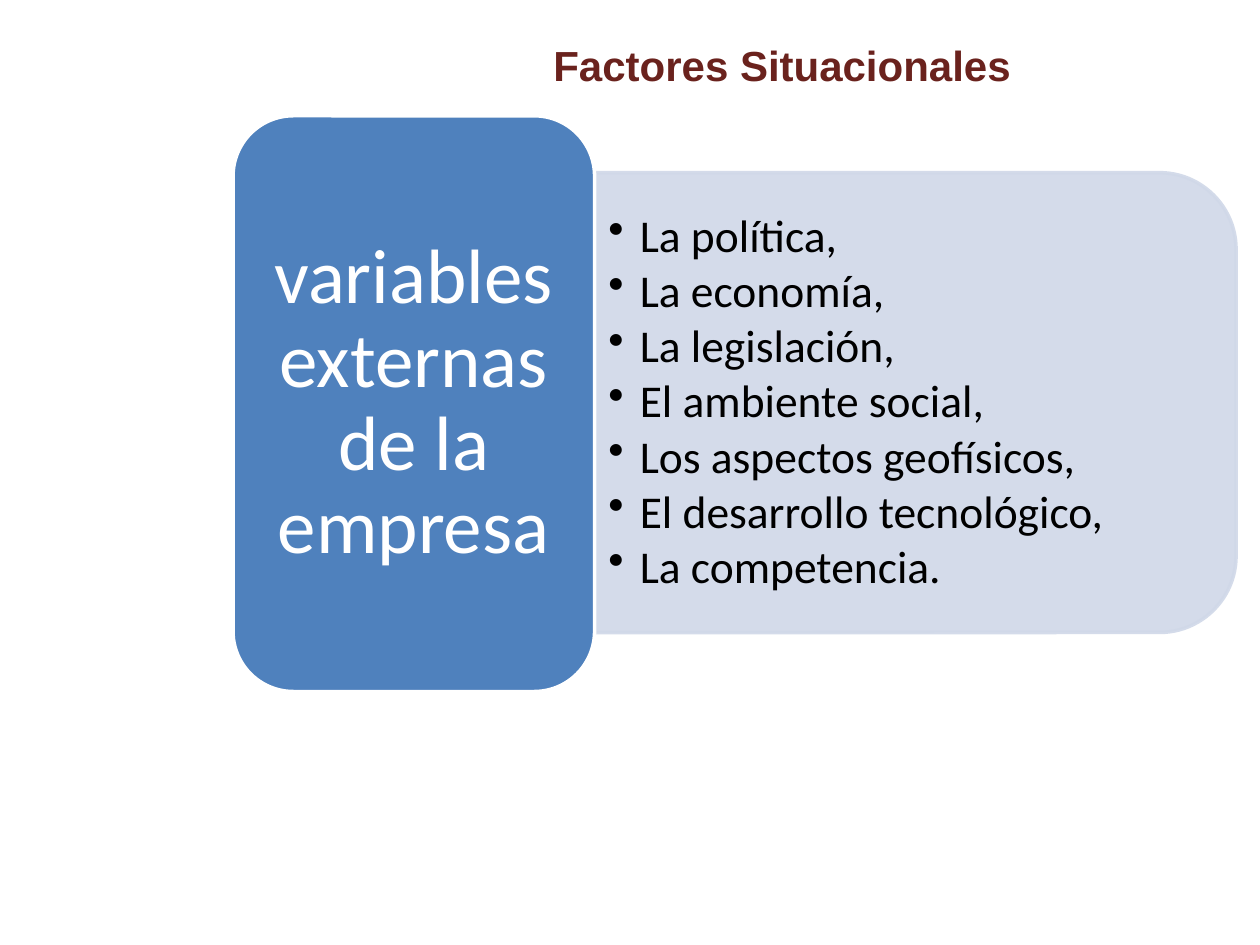
from lxml import etree
from pptx import Presentation
from pptx.dml.color import RGBColor
from pptx.enum import shapes, text
from pptx.oxml.ns import qn
from pptx.util import Pt


def paint(color_format, hex_color):
    color_format.rgb = RGBColor.from_string(hex_color)


def add_run(paragraph, words, font, size, hex_color):
    run = paragraph.add_run()
    run.text = words
    run.font.name = font
    run.font.size = Pt(size)
    paint(run.font.color, hex_color)
    return run


deck = Presentation()
deck.slide_width, deck.slide_height = Pt(720), Pt(540)
slide = deck.slides.add_slide(deck.slide_layouts[5])

# Title
title = slide.shapes.title
title.left, title.top, title.width, title.height = Pt(309), Pt(18.7), Pt(330.5), Pt(36)
title.text_frame.vertical_anchor = text.MSO_ANCHOR.TOP
heading = title.text_frame.paragraphs[0]
heading.alignment = text.PP_ALIGN.LEFT
add_run(heading, "Factores Situacionales", "Arial", 24, "6A221D").font.bold = True

# Pale panel: its rounded top is turned to the right
panel = slide.shapes.add_shape(
    shapes.MSO_SHAPE.ROUND_2_SAME_RECTANGLE, Pt(391.7), Pt(46.8), Pt(262.8), Pt(366.5))
panel.rotation = 90
panel.shadow.inherit = False
panel.fill.solid()
panel.line.width = Pt(2)
for fill in (panel.fill, panel.line.fill):
    fill.solid()
    paint(fill.fore_color, "D0D8E8")
for tint in panel._element.spPr.iter(qn("a:srgbClr")):
    etree.SubElement(tint, qn("a:alpha"), val="90000")

# List of factors, upright over the panel
factors = slide.shapes.add_textbox(Pt(339.8), Pt(111.6), Pt(354.2), Pt(237.6)).text_frame
factors.word_wrap = True
factors.vertical_anchor = text.MSO_ANCHOR.MIDDLE
factors.margin_left = factors.margin_right = Pt(7.8)
names = ["La política,", "La economía,", "La legislación,", "El ambiente social,",
         "Los aspectos geofísicos,", "El desarrollo tecnológico,", "La competencia."]
for i, name in enumerate(names):
    item = factors.add_paragraph() if i else factors.paragraphs[0]
    item.level = 1
    props = item._p.get_or_add_pPr()
    props.set("marL", str(Pt(18)))
    props.set("indent", str(Pt(-18)))
    etree.SubElement(props, qn("a:buChar"), char="•")
    item.line_spacing = 0.9
    item.space_after = Pt(3.5)
    add_run(item, name, "Calibri", 26, "000000")

# Blue card
card = slide.shapes.add_shape(
    shapes.MSO_SHAPE.ROUNDED_RECTANGLE, Pt(133.2), Pt(66.2), Pt(206.6), Pt(329))
card.shadow.inherit = False
card.fill.solid()
paint(card.fill.fore_color, "4F81BD")
card.line.width = Pt(2)
paint(card.line.color, "FFFFFF")
subject = card.text_frame
subject.word_wrap = True
subject.vertical_anchor = text.MSO_ANCHOR.MIDDLE
subject.margin_left = subject.margin_right = Pt(13)
subject.margin_top = subject.margin_bottom = Pt(6.5)
label = subject.paragraphs[0]
label.alignment = text.PP_ALIGN.CENTER
label.line_spacing = 0.9
add_run(label, "variables externas de la empresa", "Calibri", 44, "FFFFFF")

deck.save("out.pptx")
